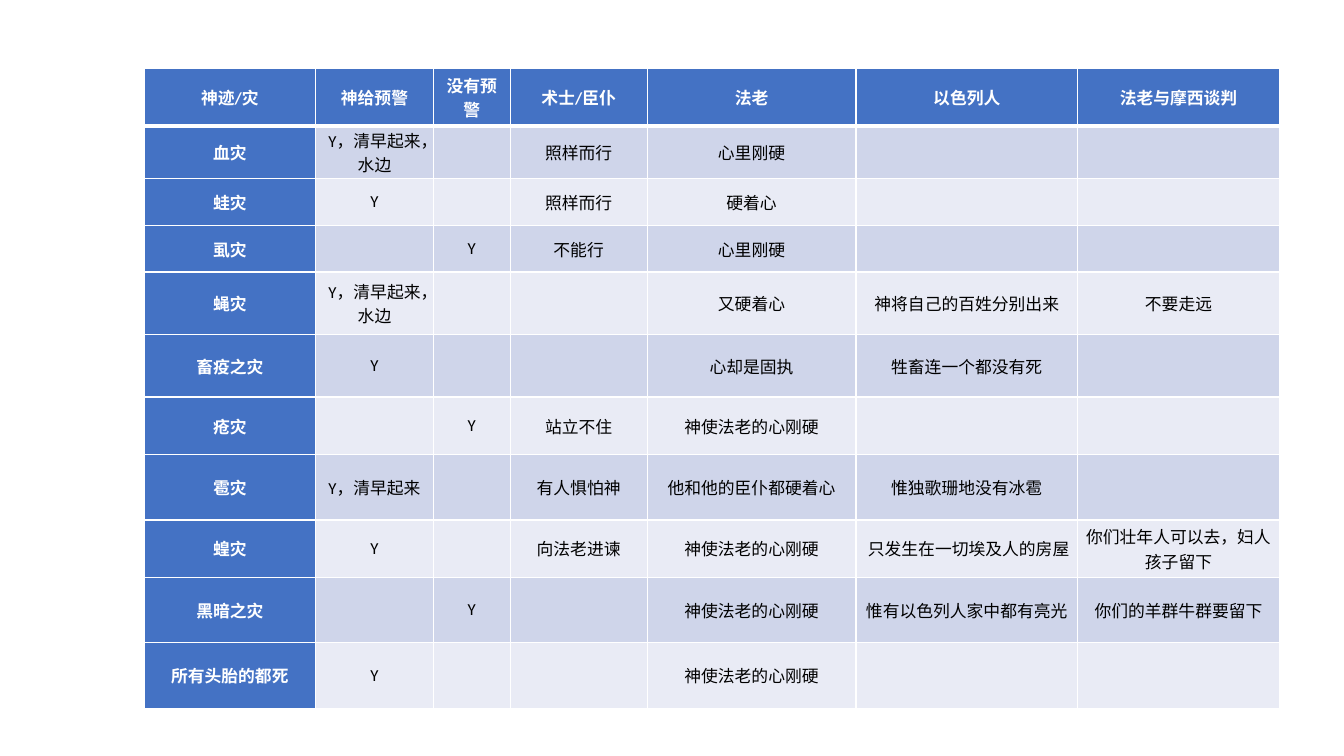
from dataclasses import dataclass

from lxml import etree
from pptx import Presentation
from pptx.dml.color import RGBColor
from pptx.enum.lang import MSO_LANGUAGE_ID
from pptx.enum.text import MSO_ANCHOR, PP_ALIGN
from pptx.oxml.ns import qn
from pptx.table import _Cell
from pptx.util import Inches, Pt

CENTER = PP_ALIGN.CENTER
MIDDLE = MSO_ANCHOR.MIDDLE
CHINESE = MSO_LANGUAGE_ID.SIMPLIFIED_CHINESE
BLANK_LAYOUT = 6


@dataclass(frozen=True)
class Theme:
    font: str = "Calibri"
    size: int = 12
    head: str = "4472C4"
    head_text: str = "FFFFFF"
    body_text: str = "000000"
    bands: tuple[str, str] = ("E9EBF5", "CFD5EA")
    border: str = "FFFFFF"
    thin: int = 1
    thick: int = 3


@dataclass(frozen=True)
class Plague:
    name: str
    warned: str = ""
    unwarned: str = ""
    servants: str = ""
    pharaoh: str = ""
    israel: str = ""
    bargain: str = ""
    height: float = 0.65

    def texts(self) -> tuple[str, ...]:
        return (self.name, self.warned, self.unwarned, self.servants,
                self.pharaoh, self.israel, self.bargain)


THEME = Theme()
LEFT, TOP = 1.43, 0.68
COLUMN_WIDTHS = (1.7, 1.17, 0.76, 1.36, 2.07, 2.2, 2)

# The first entry holds the column headings
PLAGUES = (
    Plague("神迹/灾", "神给预警", "没有预警", "术士/臣仆", "法老", "以色列人",
           "法老与摩西谈判", height=0.57),
    Plague("血灾", warned="Y，清早起来，水边", servants="照样而行",
           pharaoh="心里刚硬", height=0.52),
    Plague("蛙灾", warned="Y", servants="照样而行", pharaoh="硬着心", height=0.47),
    Plague("虱灾", unwarned="Y", servants="不能行", pharaoh="心里刚硬", height=0.46),
    Plague("蝇灾", warned="Y，清早起来，水边", pharaoh="又硬着心",
           israel="神将自己的百姓分别出来", bargain="不要走远", height=0.62),
    Plague("畜疫之灾", warned="Y", pharaoh="心却是固执",
           israel="牲畜连一个都没有死", height=0.62),
    Plague("疮灾", unwarned="Y", servants="站立不住",
           pharaoh="神使法老的心刚硬", height=0.57),
    Plague("雹灾", warned="Y，清早起来", servants="有人惧怕神",
           pharaoh="他和他的臣仆都硬着心", israel="惟独歌珊地没有冰雹"),
    Plague("蝗灾", warned="Y", servants="向法老进谏", pharaoh="神使法老的心刚硬",
           israel=" 只发生在一切埃及人的房屋",
           bargain="你们壮年人可以去，妇人孩子留下", height=0.57),
    Plague("黑暗之灾", unwarned="Y", pharaoh="神使法老的心刚硬",
           israel="惟有以色列人家中都有亮光", bargain="你们的羊群牛群要留下"),
    Plague("所有头胎的都死", warned="Y", pharaoh="神使法老的心刚硬"),
)


def write_text(cell: _Cell, text: str, *, color: str, bold: bool) -> None:
    para = cell.text_frame.paragraphs[0]
    para.alignment = CENTER
    para.font.size = Pt(THEME.size)
    if not text:
        return
    span = para.add_run()
    span.text = text
    span.font.name = THEME.font
    span.font.size = Pt(THEME.size)
    span.font.bold = bold
    span.font.language_id = CHINESE
    span.font.color.rgb = RGBColor.from_string(color)


def add_borders(cell: _Cell, widths: dict[str, int]) -> None:
    """Draw the given sides; call before filling, as lines precede the fill."""
    properties = cell._tc.get_or_add_tcPr()
    for side, width in widths.items():
        line = etree.SubElement(properties, qn(f"a:ln{side}"), w=str(Pt(width)))
        fill = etree.SubElement(line, qn("a:solidFill"))
        etree.SubElement(fill, qn("a:srgbClr"), val=THEME.border)


def format_cell(cell: _Cell, row: int, column: int, text: str) -> None:
    is_head = row == 0 or column == 0
    cell.margin_left = cell.margin_right = Inches(0.07)
    cell.margin_top = cell.margin_bottom = 0
    cell.vertical_anchor = MIDDLE
    # The heading's bottom line also serves as the top of the first row
    sides = {"L": THEME.thin, "R": THEME.thin}
    if row == 0:
        sides["T"] = THEME.thin
    sides["B"] = THEME.thin if row else THEME.thick
    add_borders(cell, sides)
    cell.fill.solid()
    cell.fill.fore_color.rgb = RGBColor.from_string(
        THEME.head if is_head else THEME.bands[row % 2])
    write_text(cell, text, bold=is_head,
               color=THEME.head_text if is_head else THEME.body_text)


def main() -> None:
    deck = Presentation()
    deck.slide_width, deck.slide_height = Inches(13.33), Inches(7.5)
    page = deck.slides.add_slide(deck.slide_layouts[BLANK_LAYOUT])

    # Table of plagues
    table = page.shapes.add_table(
        len(PLAGUES), len(COLUMN_WIDTHS), Inches(LEFT), Inches(TOP),
        Inches(sum(COLUMN_WIDTHS)),
        Inches(sum(plague.height for plague in PLAGUES))).table
    table.first_col = True
    for column, width in zip(table.columns, COLUMN_WIDTHS):
        column.width = Inches(width)
    for row, plague in enumerate(PLAGUES):
        table.rows[row].height = Inches(plague.height)
        for column, text in enumerate(plague.texts()):
            format_cell(table.cell(row, column), row, column, text)

    deck.save("out.pptx")


if __name__ == "__main__":
    main()
